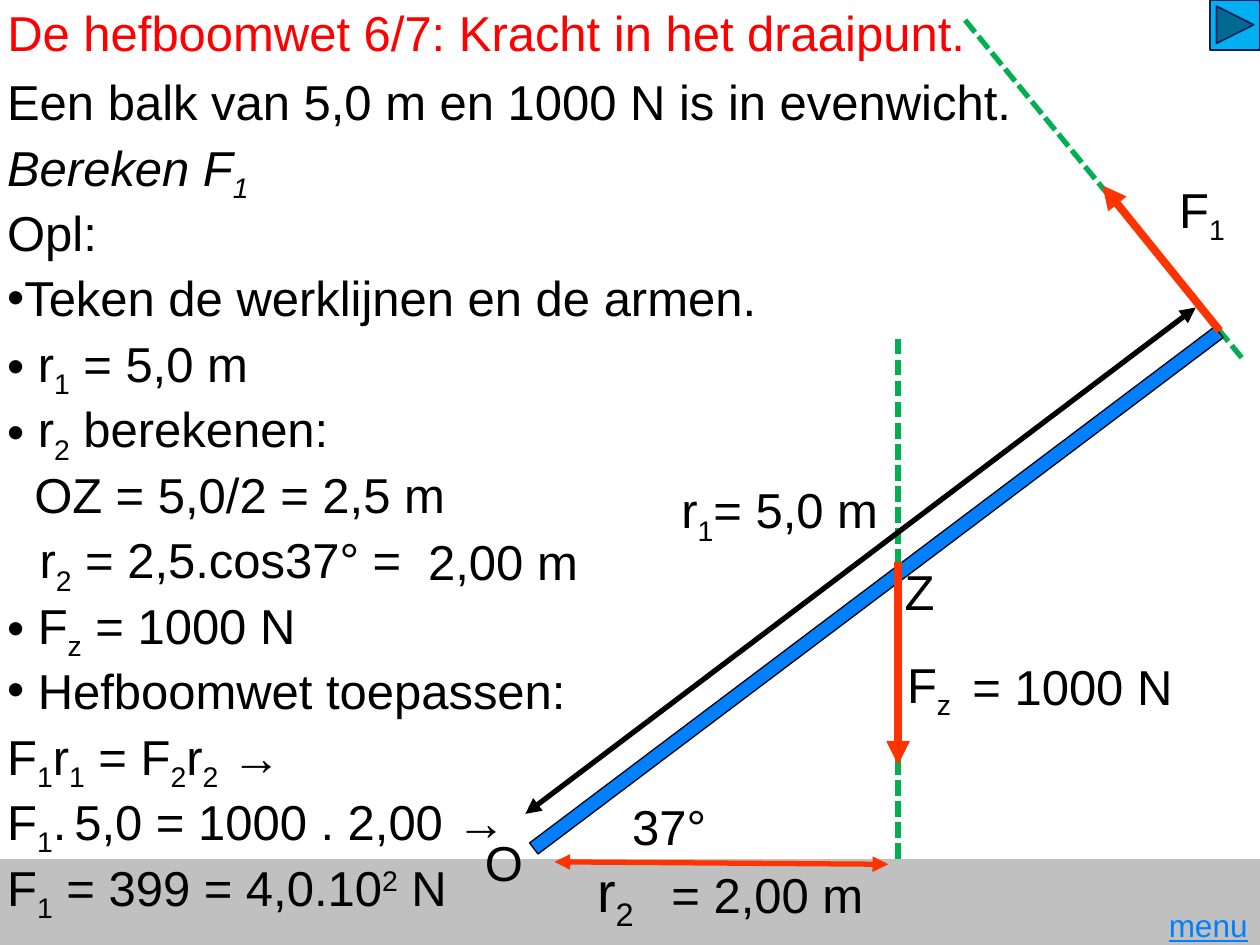
from lxml import etree
from pptx import Presentation
from pptx.dml.color import RGBColor
from pptx.enum.dml import MSO_LINE
from pptx.enum.shapes import MSO_CONNECTOR, MSO_SHAPE
from pptx.enum.text import MSO_ANCHOR, PP_ALIGN
from pptx.oxml.ns import qn
from pptx.util import Pt

BLACK = RGBColor(0x00, 0x00, 0x00)
RED = RGBColor(0xFF, 0x00, 0x00)
FORCE_RED = RGBColor(0xFF, 0x33, 0x00)
GREEN = RGBColor(0x00, 0xB0, 0x50)
BLUE = RGBColor(0x00, 0x80, 0xFF)
BUTTON_BLUE = RGBColor(0x00, 0xB0, 0xF0)
NAVY = RGBColor(0x00, 0x20, 0x60)
GREY = RGBColor(0xC0, 0xC0, 0xC0)

BASELINES = {"_": "-25000", "^": "30000"}
LEFT = -3
LINE_HEIGHT = 41
ROW_STEP = 37.4

presentation = Presentation()
presentation.slide_width = Pt(720)
presentation.slide_height = Pt(540)
slide = presentation.slides.add_slide(presentation.slide_layouts[5])


def add_text(left, top, width, text, size=28, color=BLACK, bullet_indent=0):
    """Add one line; pieces are split by |, and _ or ^ lowers or raises a piece."""
    box = slide.shapes.add_textbox(Pt(left), Pt(top), Pt(width), Pt(LINE_HEIGHT))
    box.text_frame.word_wrap = True
    paragraph = box.text_frame.paragraphs[0]
    if bullet_indent:
        properties = paragraph._p.get_or_add_pPr()
        properties.set("marL", str(Pt(bullet_indent)))
        properties.set("indent", str(-Pt(bullet_indent)))
        etree.SubElement(properties, qn("a:buFont")).set("typeface", "Arial")
        etree.SubElement(properties, qn("a:buChar")).set("char", "•")
    for piece in text.split("|"):
        run = paragraph.add_run()
        run.text = piece.lstrip("_^")
        run.font.name = "Arial"
        run.font.size = Pt(size)
        run.font.color.rgb = color
        if piece[0] in BASELINES:
            run._r.get_or_add_rPr().set("baseline", BASELINES[piece[0]])
    return paragraph


def add_line(start, end, color, width, arrow_ends=(), dash=None):
    connector = slide.shapes.add_connector(
        MSO_CONNECTOR.STRAIGHT, *(Pt(value) for value in start + end))
    connector.line.color.rgb = color
    connector.line.width = Pt(width)
    if dash:
        connector.line.dash_style = dash
    for arrow_end in arrow_ends:
        arrow = etree.SubElement(connector.line._get_or_add_ln(), qn(f"a:{arrow_end}"))
        arrow.set("type", "triangle")
    etree.SubElement(connector._element.spPr, qn("a:effectLst"))


# Title
title = slide.shapes.title
title.left, title.top, title.width, title.height = Pt(LEFT), Pt(-2), Pt(723), Pt(LINE_HEIGHT)
title.text_frame.text = "De hefboomwet 6/7: Kracht in het draaipunt."
title.text_frame.vertical_anchor = MSO_ANCHOR.TOP
title.text_frame.word_wrap = True
title_paragraph = title.text_frame.paragraphs[0]
title_paragraph.alignment = PP_ALIGN.LEFT
title_font = title_paragraph.runs[0].font
title_font.name = "Arial"
title_font.size = Pt(28)
title_font.color.rgb = RED

# Lines of action, ground, beam and button
add_line((513.2, 193.5), (513.2, 512), GREEN, 3, dash=MSO_LINE.SQUARE_DOT)
add_line((551.5, 11.5), (710, 205), GREEN, 3, dash=MSO_LINE.SQUARE_DOT)

for shape_type, left, top, width, height, rotation, fill, outline, line_width in [
    (MSO_SHAPE.RECTANGLE, 0, 491, 720, 49, 0, GREY, None, 0),
    (MSO_SHAPE.RECTANGLE, 496.8, 92.2, 8, 490.3, 53, BLUE, BLACK, 0.75),
    (MSO_SHAPE.ACTION_BUTTON_FORWARD_OR_NEXT, 691.6, 0, 28.4, 28.4, 0, BUTTON_BLUE, NAVY, 1),
]:
    shape = slide.shapes.add_shape(shape_type, Pt(left), Pt(top), Pt(width), Pt(height))
    shape.rotation = rotation
    shape.shadow.inherit = False
    shape.fill.solid()
    shape.fill.fore_color.rgb = fill
    if outline is None:
        shape.line.fill.background()
    else:
        shape.line.color.rgb = outline
        shape.line.width = Pt(line_width)

# Forces and arms
add_line((513.2, 321), (513.2, 437), FORCE_RED, 4.5, ["tailEnd"])
add_line((697, 189), (630, 106), FORCE_RED, 4.5, ["tailEnd"])
add_line((300.2, 465.1), (683.3, 175.7), BLACK, 3, ["headEnd", "tailEnd"])
add_line((316.8, 492.5), (507.6, 493.9), FORCE_RED, 3, ["headEnd", "tailEnd"])

# Labels in the drawing
for left, top, width, text, size in [
    (270, 472, 48, "O", 28),
    (666.7, 99, 60, "F|_1", 28),
    (511.2, 370.5, 60, "F|_z", 28),
    (548.6, 371.5, 156, "= 1000 N", 28),
    (509.8, 317.5, 48, "Z", 28),
    (354.2, 451.4, 91, "37°", 28),
    (334.1, 486, 60, "r|_2", 32),
    (376.6, 490.3, 186, "= 2,00 m", 28),
    (382.3, 270.7, 189, "r|_1|= 5,0 m", 28),
]:
    add_text(left, top, width, text, size)

# Worked solution: text, extra left offset, bullet indent
solution = [
    ("Een balk van 5,0 m en 1000 N is in evenwicht.", 0, 0),
    ("Bereken F|_1", 0, 0),
    ("Opl:", 0, 0),
    ("Teken de werklijnen en de armen.", 0, 9.8),
    ("r|_1| = 5,0 m", 0, 17.5),
    ("r|_2| berekenen:", 0, 17.5),
    ("OZ = 5,0/2 = 2,5 m", 15.5, 0),
    ("r|_2| = 2,5.cos37° =", 18.5, 0),
    ("F|_z| = 1000 N", 0, 17.5),
    ("Hefboomwet toepassen:", 0, 17.5),
    ("F|_1|r|_1| = F|_2|r|_2| →", 0, 0),
    ("F|_1|.|_ |5,0 = 1000 . 2,00 →", 0, 0),
    ("F|_1| = 399 = 4,0.10|^2| N", 0, 0),
]
for row, (text, offset, bullet_indent) in enumerate(solution, start=1):
    paragraph = add_text(LEFT + offset, row * ROW_STEP, 614, text,
                         bullet_indent=bullet_indent)
    if text.startswith("Bereken"):
        for run in paragraph.runs:
            run.font.italic = True
add_text(237.6, 300, 107, "2,00 m")

menu = add_text(652.3, 514, 67.7, "menu", 18, BLUE)
menu.alignment = PP_ALIGN.RIGHT
menu.runs[0].font.underline = True

presentation.save("out.pptx")
